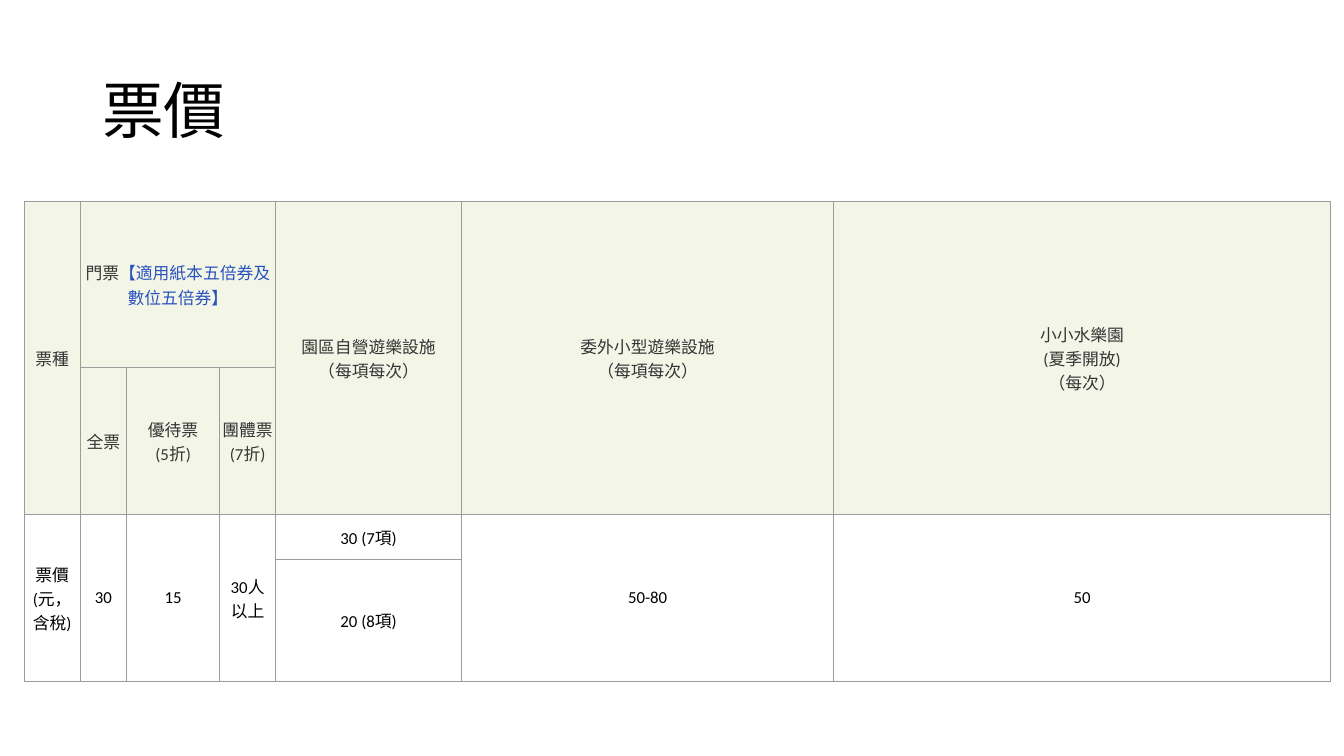
from copy import deepcopy
from dataclasses import dataclass

from lxml import etree
from pptx import Presentation
from pptx.dml.color import RGBColor
from pptx.enum.text import MSO_ANCHOR, PP_ALIGN
from pptx.oxml.ns import qn
from pptx.util import Pt

MIDDLE = MSO_ANCHOR.MIDDLE
LEFT, CENTER = PP_ALIGN.LEFT, PP_ALIGN.CENTER


@dataclass(frozen=True)
class Theme:
    font: str = "Calibri"
    black: str = "000000"
    gray: str = "343434"
    blue: str = "2A52BE"
    header_fill: str = "F3F6E7"
    border: str = "9C9C9C"
    border_width: float = 0.75
    title_size: float = 44
    cell_size: float = 12
    cell_margin: float = 1.5


@dataclass(frozen=True)
class Entry:
    row: int
    col: int
    text: str
    rows: int = 1
    cols: int = 1
    note: str = ""


THEME = Theme()
HEADER_ROWS = 2
COL_WIDTHS = (40, 33.2, 66.4, 40, 132.9, 265.7, 355)
ROW_HEIGHTS = (118.8, 105, 32, 87)
ENTRIES = (
    Entry(0, 0, "票種", rows=2),
    Entry(0, 1, "門票", cols=3, note="【適用紙本五倍券及數位五倍券】"),
    Entry(0, 4, "園區自營遊樂設施\n（每項每次）", rows=2),
    Entry(0, 5, "委外小型遊樂設施\n（每項每次）", rows=2),
    Entry(0, 6, "小小水樂園\n(夏季開放)\n（每次）", rows=2),
    Entry(1, 1, "全票"),
    Entry(1, 2, "優待票\n(5折)"),
    Entry(1, 3, "團體票\n(7折)"),
    Entry(2, 0, "票價\n(元，含稅)", rows=2),
    Entry(2, 1, "30", rows=2),
    Entry(2, 2, "15", rows=2),
    Entry(2, 3, "30人\n以上", rows=2),
    Entry(2, 4, "30 (7項)"),
    Entry(2, 5, "50-80", rows=2),
    Entry(2, 6, "50", rows=2),
    Entry(3, 4, "20 (8項)"),
)


def write(p, text: str, *, size: float, color: str, align=LEFT) -> None:
    p.alignment = align
    for i, line in enumerate(text.split("\n")):
        if i:
            p.add_line_break()
            p._p[-1].append(deepcopy(r._r.rPr))
        r = p.add_run()
        r.text = line
        r.font.name = THEME.font
        r.font.size = Pt(size)
        r.font.color.rgb = RGBColor.from_string(color)


def add_borders(cell) -> None:
    tc_pr = cell._tc.get_or_add_tcPr()
    for side in ("lnL", "lnR", "lnT", "lnB"):
        ln = etree.SubElement(tc_pr, qn(f"a:{side}"), w=str(Pt(THEME.border_width)))
        fill = etree.SubElement(ln, qn("a:solidFill"))
        etree.SubElement(fill, qn("a:srgbClr"), val=THEME.border)


def format_cell(cell, is_header: bool) -> None:
    add_borders(cell)
    cell.vertical_anchor = MIDDLE
    cell.margin_left = cell.margin_right = Pt(THEME.cell_margin)
    cell.margin_top = cell.margin_bottom = Pt(THEME.cell_margin)
    if is_header:
        cell.fill.solid()
        cell.fill.fore_color.rgb = RGBColor.from_string(THEME.header_fill)
    else:
        cell.fill.background()


def add_title(s, text: str) -> None:
    tf = s.shapes.add_textbox(Pt(66), Pt(28.8), Pt(828), Pt(104.4)).text_frame
    tf.word_wrap = True
    tf.vertical_anchor = MIDDLE
    p = tf.paragraphs[0]
    p.line_spacing = 0.9
    write(p, text, size=THEME.title_size, color=THEME.black)


def add_price_table(s) -> None:
    table = s.shapes.add_table(
        len(ROW_HEIGHTS), len(COL_WIDTHS), Pt(17.3), Pt(144),
        Pt(sum(COL_WIDTHS)), Pt(sum(ROW_HEIGHTS)),
    ).table
    table.first_row = table.horz_banding = False
    for column, width in zip(table.columns, COL_WIDTHS):
        column.width = Pt(width)
    for i, (row, height) in enumerate(zip(table.rows, ROW_HEIGHTS)):
        row.height = Pt(height)
        for cell in row.cells:
            format_cell(cell, i < HEADER_ROWS)
    for e in ENTRIES:
        cell = table.cell(e.row, e.col)
        if e.rows > 1 or e.cols > 1:
            cell.merge(table.cell(e.row + e.rows - 1, e.col + e.cols - 1))
        p = cell.text_frame.paragraphs[0]
        color = THEME.gray if e.row < HEADER_ROWS else THEME.black
        write(p, e.text, size=THEME.cell_size, color=color, align=CENTER)
        if e.note:
            write(p, e.note, size=THEME.cell_size, color=THEME.blue, align=CENTER)


def main() -> None:
    prs = Presentation()
    prs.slide_width, prs.slide_height = Pt(960), Pt(540)
    s = prs.slides.add_slide(prs.slide_layouts[6])
    add_title(s, "票價")
    add_price_table(s)
    prs.save("out.pptx")


if __name__ == "__main__":
    main()
